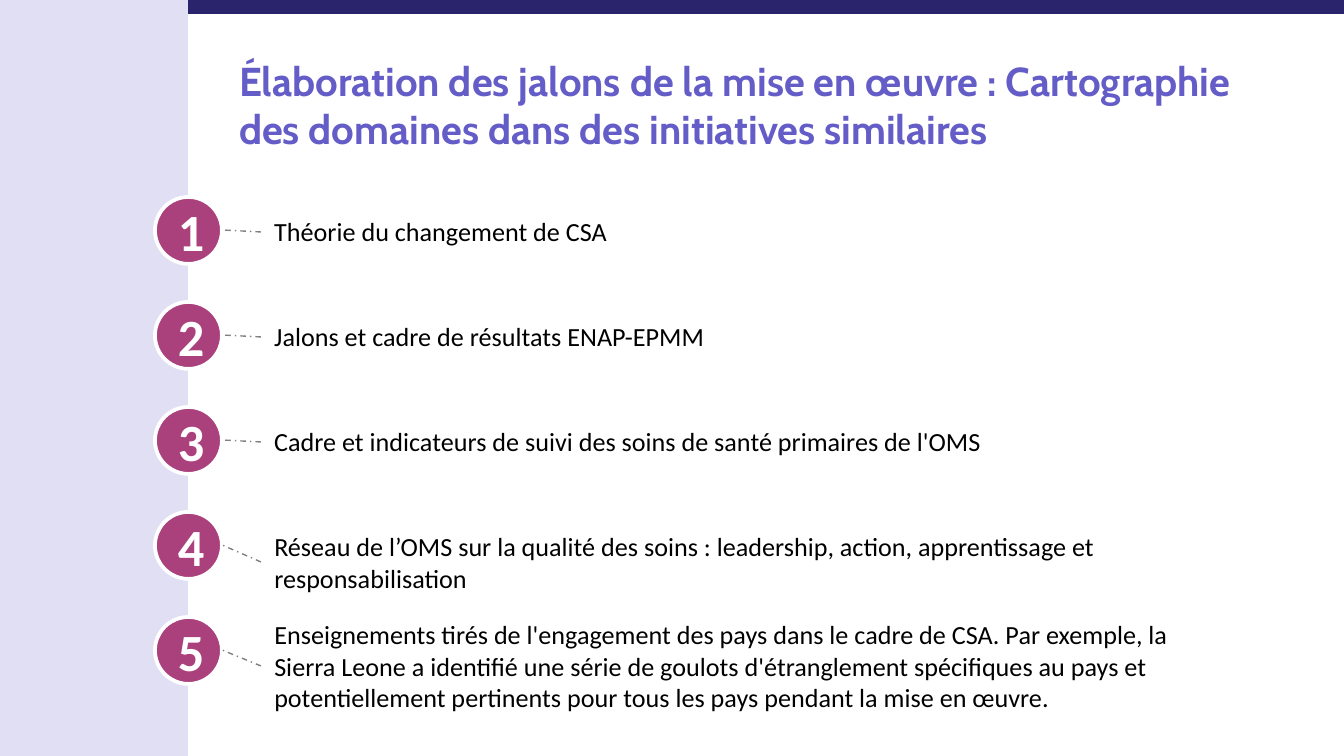
import pptx
import pptx.dml.color
import pptx.enum.dml
import pptx.enum.shapes
import pptx.enum.text
import pptx.oxml.ns
import pptx.util
from lxml import etree

RGBColor = pptx.dml.color.RGBColor
Shapes = pptx.enum.shapes.MSO_SHAPE
Align = pptx.enum.text.PP_ALIGN
Anchor = pptx.enum.text.MSO_ANCHOR

NAVY = RGBColor(0x2A, 0x24, 0x6C)
LAVENDER = RGBColor(0xE0, 0xDF, 0xF4)
VIOLET = RGBColor(0x64, 0x5D, 0xC7)
PLUM = RGBColor(0xAA, 0x41, 0x7C)
GREY = RGBColor(0x80, 0x80, 0x80)
WHITE = RGBColor(0xFF, 0xFF, 0xFF)
BLACK = RGBColor(0x00, 0x00, 0x00)

EMU_PER_PX = 914400 / 134.4
WIDTH, HEIGHT = 1344, 756
BADGE = 67
ROW_PITCH = 105
TEXT_LEFT = 106

TITLE = ("Élaboration des jalons de la mise en œuvre : Cartographie "
         "des domaines dans des initiatives similaires")

# text, text box width, text box height, text box top relative to the badge
MILESTONES = [
    ("Théorie du changement de CSA", 672, 46, 12),
    ("Jalons et cadre de résultats ENAP-EPMM", 672, 46, 12),
    ("Cadre et indicateurs de suivi des soins de santé primaires de l'OMS", 841, 46, 12),
    ("Réseau de l’OMS sur la qualité des soins : leadership, action, "
     "apprentissage et responsabilisation", 965, 77, 12),
    ("Enseignements tirés de l'engagement des pays dans le cadre de CSA. "
     "Par exemple, la Sierra Leone a identifié une série de goulots "
     "d'étranglement spécifiques au pays et potentiellement pertinents pour "
     "tous les pays pendant la mise en œuvre.", 965, 109, -5),
]


def px(*lengths):
    """Turn pixel lengths into a list of EMU lengths."""
    return [pptx.util.Emu(round(length * EMU_PER_PX)) for length in lengths]


def write_text(shape, text, *, size, color, font="Calibri", bold=False,
               align=Align.LEFT, anchor=Anchor.TOP):
    """Write one formatted paragraph into a shape."""
    frame = shape.text_frame
    frame.word_wrap = True
    frame.auto_size = pptx.enum.text.MSO_AUTO_SIZE.NONE
    frame.vertical_anchor = anchor
    para = frame.paragraphs[0]
    para.alignment = align
    span = para.add_run()
    span.text = text
    span.font.name = font
    span.font.size = pptx.util.Pt(size)
    span.font.bold = bold
    span.font.color.rgb = color


def add_filled(page, kind, box, color):
    """Add a borderless preset shape with a plain fill."""
    shape = page.shapes.add_shape(kind, *px(*box))
    shape.shadow.inherit = False
    shape.fill.solid()
    shape.fill.fore_color.rgb = color
    shape.line.fill.background()
    return shape


def add_leader(page, start, end):
    """Add a thin grey dash-dot line between two points."""
    leader = page.shapes.add_connector(
        pptx.enum.shapes.MSO_CONNECTOR.STRAIGHT, *px(*start, *end))
    leader.line.color.rgb = GREY
    leader.line.width = pptx.util.Pt(0.75)
    leader.line.dash_style = pptx.enum.dml.MSO_LINE.DASH_DOT
    etree.SubElement(leader._element.spPr, pptx.oxml.ns.qn("a:effectLst"))


def add_title(page, box):
    """Place and format the title placeholder."""
    title = page.shapes.title
    title.left, title.top, title.width, title.height = px(*box)
    frame = title.text_frame
    frame.margin_left, frame.margin_top, frame.margin_right, frame.margin_bottom = px(*[13] * 4)
    write_text(title, TITLE, size=21.6, color=VIOLET, font="Cabin", bold=True)


def add_milestone(page, left, top, number, milestone):
    """Add a numbered badge, its text and the line that joins them."""
    text, width, height, offset = milestone
    badge = add_filled(page, Shapes.OVAL, (left, top, BADGE, BADGE), PLUM)
    badge.line.color.rgb = WHITE
    badge.line.width = pptx.util.Pt(2)
    write_text(badge, str(number), size=28, color=WHITE, bold=True,
               align=Align.CENTER, anchor=Anchor.MIDDLE)
    text_left, text_top = left + TEXT_LEFT, top + offset
    add_leader(page, (text_left, text_top + height // 2),
               (left + BADGE, top + BADGE // 2))
    label = page.shapes.add_textbox(*px(text_left, text_top, width, height))
    write_text(label, text, size=14, color=BLACK)


def add_milestones(page, left, top):
    """Stack the milestones at an equal pitch."""
    for index, milestone in enumerate(MILESTONES):
        add_milestone(page, left, top + index * ROW_PITCH, index + 1, milestone)


def main():
    """Build the slide and save it."""
    deck = pptx.Presentation()
    deck.slide_width, deck.slide_height = px(WIDTH, HEIGHT)
    page = deck.slides.add_slide(deck.slide_layouts.get_by_name("Title Only"))
    add_filled(page, Shapes.RECTANGLE, (0, 0, WIDTH, 14), NAVY)
    add_filled(page, Shapes.RECTANGLE, (0, 0, 188, HEIGHT), LAVENDER)
    add_title(page, (226, 43, 1035, 85))
    add_milestones(page, 155, 197)
    deck.save("out.pptx")


if __name__ == "__main__":
    main()
